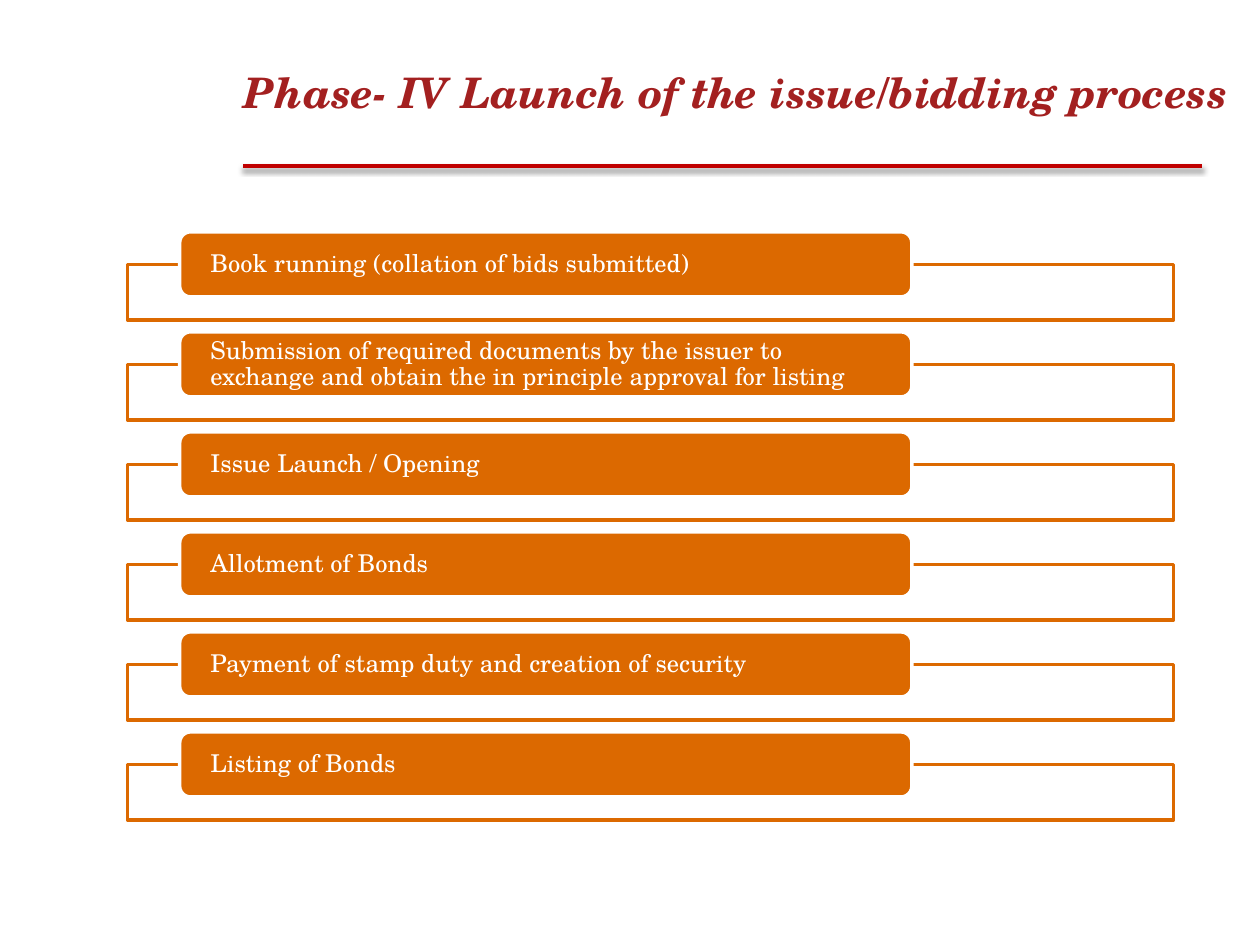
from dataclasses import dataclass

from lxml import etree
from pptx import Presentation
from pptx import util as u
from pptx.dml.color import RGBColor
from pptx.enum import shapes, text
from pptx.oxml.ns import qn

FONT = "TeX Gyre Schola"
ORANGE, WHITE = "DC6900", "FFFFFF"
FIRST_TOP, STEP_PITCH = 132.5, 57.15
FRAME_DROP = 18.7


@dataclass(frozen=True)
class Box:
    left: float
    top: float
    width: float
    height: float


STEPS = [
    "Book running (collation of bids submitted)",
    "Submission of required documents by the issuer to exchange and obtain "
    "the in principle approval for listing",
    "Issue Launch / Opening",
    "Allotment of Bonds",
    "Payment of stamp duty and creation of security",
    "Listing of Bonds",
]


def color(value: str) -> RGBColor:
    return RGBColor.from_string(value)


def place(shape, box: Box) -> None:
    for name in ("left", "top", "width", "height"):
        setattr(shape, name, u.Pt(getattr(box, name)))


def write(shape, words: str, font_format: dict, ink: str, inset: float = 0) -> None:
    """Fill a shape with one left-aligned, vertically centred paragraph."""
    frame = shape.text_frame
    frame_format = {
        "word_wrap": True,
        "auto_size": text.MSO_AUTO_SIZE.NONE,
        "vertical_anchor": text.MSO_ANCHOR.MIDDLE,
        "margin_left": u.Pt(inset),
        "margin_right": u.Pt(inset),
        "margin_top": 0,
        "margin_bottom": 0,
    }
    for name, value in frame_format.items():
        setattr(frame, name, value)
    para = frame.paragraphs[0]
    para.alignment = text.PP_ALIGN.LEFT
    span = para.add_run()
    span.text = words
    for name, value in font_format.items():
        setattr(span.font, name, value)
    span.font.color.rgb = color(ink)


def add_box(page, kind, box: Box, fill: str, line: str):
    shape = page.shapes.add_shape(kind, 0, 0, 0, 0)
    place(shape, box)
    shape.shadow.inherit = False
    shape.fill.solid()
    shape.fill.fore_color.rgb = color(fill)
    shape.line.color.rgb = color(line)
    shape.line.width = u.Pt(2)
    return shape


def set_alpha(fill_parent, percent: int) -> None:
    tint = fill_parent.find(".//" + qn("a:srgbClr"))
    etree.SubElement(tint, qn("a:alpha"), val=str(percent * 1000))


def add_step(page, words: str, top: float) -> None:
    frame = add_box(page, shapes.MSO_SHAPE.RECTANGLE,
                    Box(72.8, top + FRAME_DROP, 597.8, 31.7), WHITE, ORANGE)
    set_alpha(frame.fill._xPr.find(qn("a:solidFill")), 90)
    label = add_box(page, shapes.MSO_SHAPE.ROUNDED_RECTANGLE,
                    Box(102.7, top, 418.4, 37.2), ORANGE, WHITE)
    write(label, words, {"name": FONT, "size": u.Pt(14)}, WHITE, inset=15.8)
    label.text_frame.paragraphs[0].line_spacing = 0.9


def add_rule(page) -> None:
    """Draw the red line under the title with its soft shadow."""
    rule = page.shapes.add_connector(
        shapes.MSO_CONNECTOR.STRAIGHT, u.Pt(139), u.Pt(95), u.Pt(687), u.Pt(95))
    rule.line.color.rgb = color("C00000")
    rule.line.width = u.Pt(2.25)
    effects = etree.SubElement(rule._element.spPr, qn("a:effectLst"))
    shadow = etree.SubElement(
        effects, qn("a:outerShdw"), blurRad=str(u.Pt(3.1)), dist=str(u.Pt(1.8)),
        dir=str(90 * 60000), rotWithShape="0")
    etree.SubElement(shadow, qn("a:srgbClr"), val="000000")
    set_alpha(shadow, 35)


def main() -> None:
    deck = Presentation()
    deck.slide_width, deck.slide_height = u.Pt(720), u.Pt(540)
    page = deck.slides.add_slide(deck.slide_layouts.get_by_name("Title Only"))
    title = page.shapes.title
    place(title, Box(139, 17.3, 569.5, 69.8))
    write(title, "Phase- IV Launch of the issue/bidding process",
          {"name": FONT, "size": u.Pt(24), "bold": True, "italic": True}, "A32020")
    add_rule(page)
    for index, words in enumerate(STEPS):
        add_step(page, words, FIRST_TOP + index * STEP_PITCH)
    deck.save("out.pptx")


if __name__ == "__main__":
    main()
